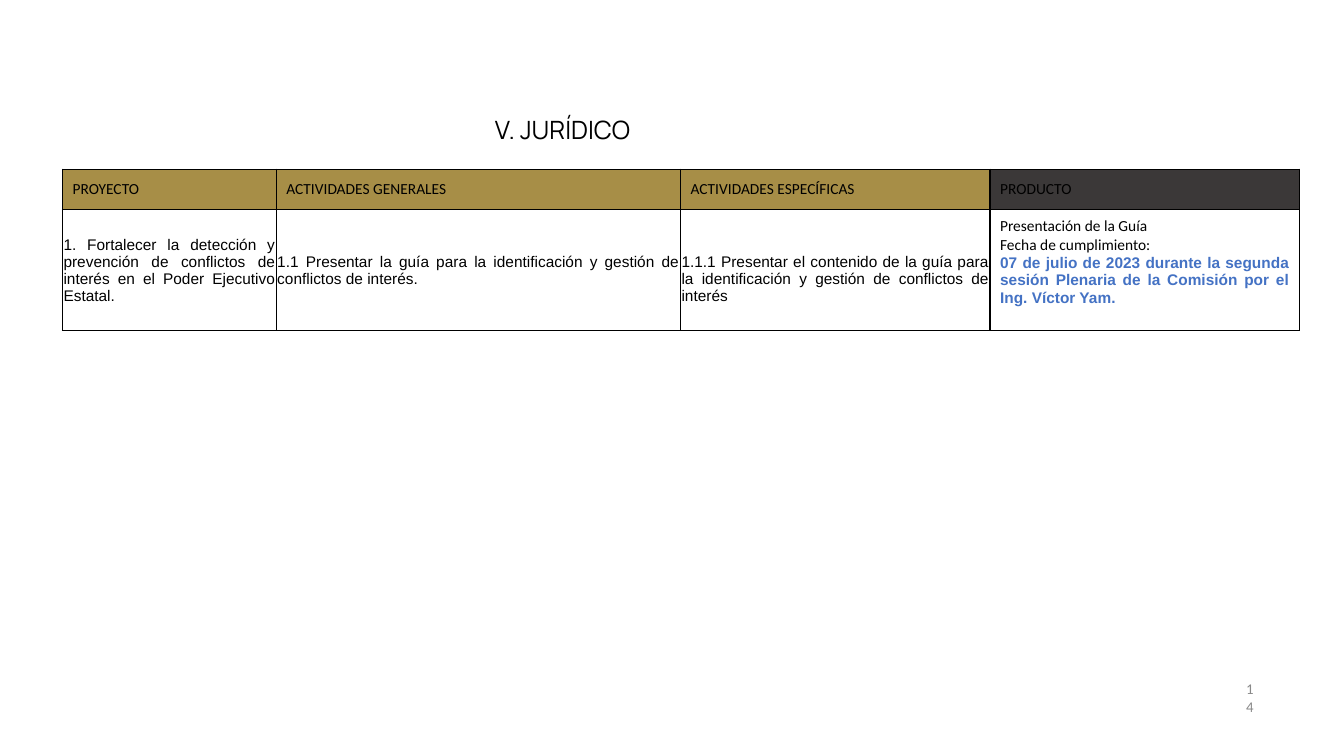
"""Build the legal section slide with its table of activities."""
from lxml import etree
from pptx import Presentation
from pptx.dml.color import RGBColor
from pptx.enum.text import MSO_ANCHOR, PP_ALIGN
from pptx.oxml.ns import qn
from pptx.util import Inches, Pt

MIDDLE = MSO_ANCHOR.MIDDLE
CENTER, JUSTIFY = PP_ALIGN.CENTER, PP_ALIGN.JUSTIFY
BLACK, GOLD, CHARCOAL, BLUE, GRAY = "000000", "A78E47", "3B3838", "4472C4", "898989"
COLUMN_WIDTHS = [2.12, 4.01, 3.07, 3.07]
ROW_HEIGHTS = [0.4, 1.2]
HEADER_INSETS = (0.1, 0.05, 0.1, 0.05)
BODY_INSETS = (0.01, 0.01, 0.01, 0)


def color(value):
    return RGBColor.from_string(value)


def add_span(para, text, font, size, shade, bold=False):
    span = para.add_run()
    span.text = text
    span.font.name = font
    span.font.size = Pt(size)
    span.font.bold = bold
    span.font.color.rgb = color(shade)


deck = Presentation()
deck.slide_width, deck.slide_height = Inches(13.33), Inches(7.5)
page = deck.slides.add_slide(deck.slide_layouts[5])

title = page.shapes.title
title.left, title.top = Inches(1.42), Inches(1.12)
title.width, title.height = Inches(8.32), Inches(0.32)
number = page.shapes.add_textbox(Inches(12.32), Inches(6.74), Inches(0.15), Inches(0.72))
for box in (title, number):
    frame = box.text_frame
    frame.word_wrap = True
    frame.margin_left = frame.margin_top = frame.margin_right = frame.margin_bottom = 0
title.text_frame.margin_top = Inches(0.01)
title.text_frame.vertical_anchor = MIDDLE
heading = title.text_frame.paragraphs[0]
heading.alignment = CENTER
add_span(heading, "V. JURÍDICO", "Manrope", 18, BLACK)
number.text_frame.margin_left = Inches(0.04)
add_span(number.text_frame.paragraphs[0], "14", "Calibri", 10.6, GRAY)

headers = [
    ("PROYECTO", GOLD),
    ("ACTIVIDADES GENERALES", GOLD),
    ("ACTIVIDADES ESPECÍFICAS", GOLD),
    ("PRODUCTO", CHARCOAL),
]
activities = [
    ("1. Fortalecer la detección y prevención de conflictos de interés en el Poder "
     "Ejecutivo Estatal.", BODY_INSETS),
    ("1.1 Presentar la guía para la identificación y gestión de conflictos de interés.",
     BODY_INSETS),
    ("1.1.1 Presentar el contenido de la guía para la identificación y gestión de "
     "conflictos de interés", (0.01, 0.18, 0.01, 0)),
]
product = [
    ("Presentación de la Guía", "Calibri", BLACK, False),
    ("Fecha de cumplimiento:", "Calibri", BLACK, False),
    ("07 de julio de 2023 durante la segunda sesión Plenaria de la Comisión por el "
     "Ing. Víctor Yam.", "Arial", BLUE, True),
]
header_row = [([(text, "Calibri", BLACK, False)], HEADER_INSETS, fill) for text, fill in headers]
body_row = [([(text, "Arial", BLACK, False)], insets, None) for text, insets in activities]
body_row.append((product, (0.1, 0.05, 0.1, 0.22), None))

table = page.shapes.add_table(
    len(ROW_HEIGHTS), len(COLUMN_WIDTHS), Inches(0.62), Inches(1.68),
    Inches(sum(COLUMN_WIDTHS)), Inches(sum(ROW_HEIGHTS))).table
table.first_row = table.horz_banding = False
for column, width in zip(table.columns, COLUMN_WIDTHS):
    column.width = Inches(width)
for row, height in zip(table.rows, ROW_HEIGHTS):
    row.height = Inches(height)

for row, contents in zip(table.rows, [header_row, body_row]):
    for cell, (lines, insets, fill) in zip(row.cells, contents):
        cell.vertical_anchor = MIDDLE
        (cell.margin_left, cell.margin_top,
         cell.margin_right, cell.margin_bottom) = map(Inches, insets)
        properties = cell._tc.get_or_add_tcPr()
        for side in ("a:lnL", "a:lnR", "a:lnT", "a:lnB"):
            border = etree.SubElement(properties, qn(side), w=str(Pt(1)))
            paint = etree.SubElement(border, qn("a:solidFill"))
            etree.SubElement(paint, qn("a:srgbClr"), val=BLACK)
        if fill:
            cell.fill.solid()
            cell.fill.fore_color.rgb = color(fill)
        else:
            cell.fill.background()
        for index, (text, font, shade, bold) in enumerate(lines):
            frame = cell.text_frame
            para = frame.add_paragraph() if index else frame.paragraphs[0]
            para.alignment = JUSTIFY
            add_span(para, text, font, 11, shade, bold)

deck.save("out.pptx")
